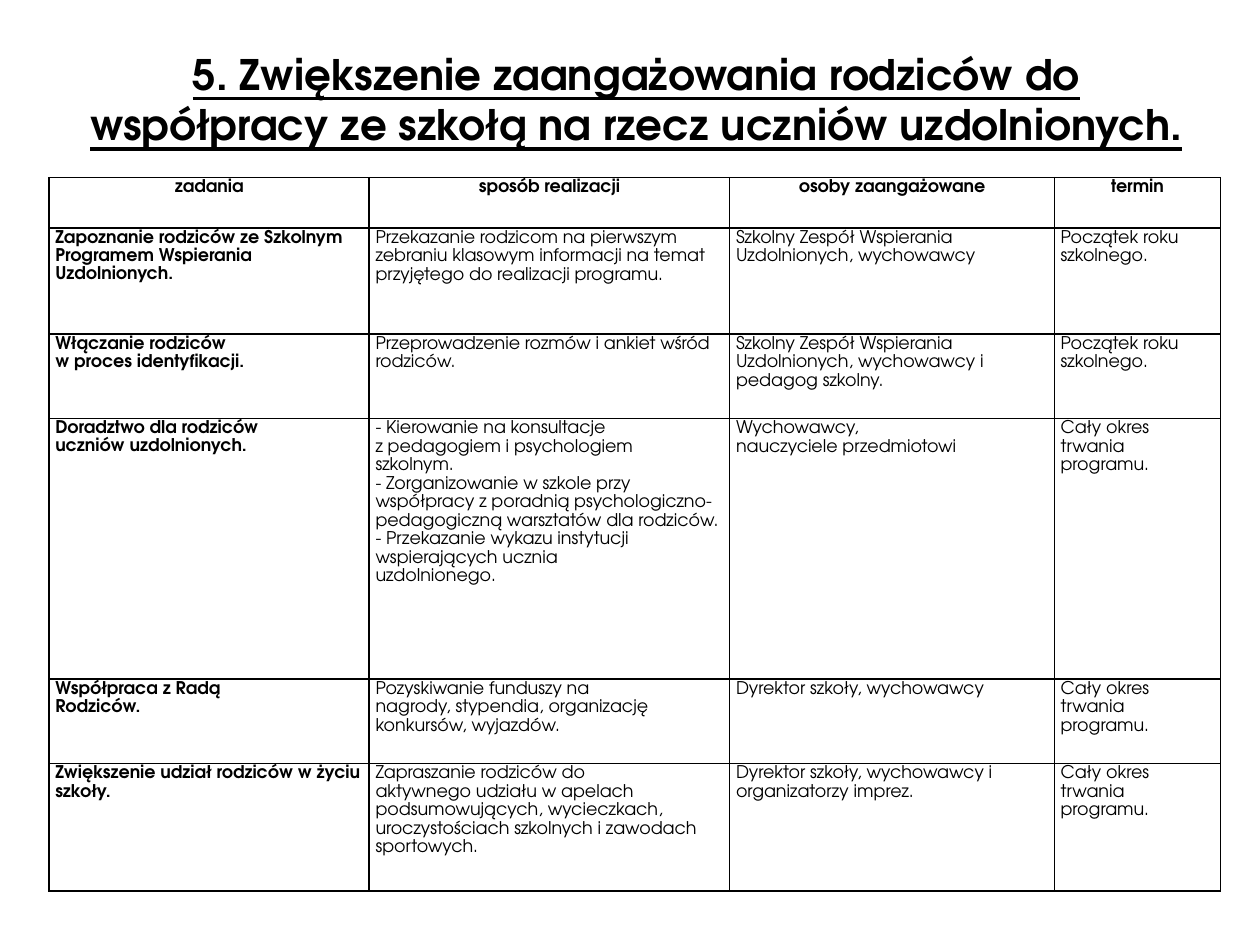
"""Build a slide with a table of tasks that involve parents in supporting gifted pupils."""
from dataclasses import dataclass

from lxml.etree import SubElement
from pptx import Presentation
from pptx.dml.color import RGBColor
from pptx.enum.text import MSO_ANCHOR, MSO_AUTO_SIZE, PP_ALIGN
from pptx.oxml.ns import qn
from pptx.util import Pt

FONT = "TeX Gyre Adventor"
BLACK = "000000"
WHITE = "FFFFFF"
TITLE = "5. Zwiększenie zaangażowania rodziców do współpracy ze szkołą na rzecz uczniów uzdolnionych."
HEADERS = ("zadania", "sposób realizacji", "osoby zaangażowane", "termin")
COLUMN_WIDTHS = (183, 206, 185.5, 95)
HEADER_HEIGHT = 28.8
START_OF_YEAR = "Początek roku szkolnego."
WHOLE_PROGRAMME = "Cały okres trwania programu."


@dataclass(frozen=True)
class Task:
    height: float
    name: str
    method: str
    people: str
    term: str


TASKS = (
    Task(
        60.5,
        "Zapoznanie rodziców ze Szkolnym Programem Wspierania Uzdolnionych.",
        "Przekazanie rodzicom na pierwszym zebraniu klasowym informacji na temat "
        "przyjętego do realizacji programu.",
        "Szkolny Zespół Wspierania Uzdolnionych, wychowawcy",
        START_OF_YEAR,
    ),
    Task(
        48.3,
        "Włączanie rodziców\nw proces identyfikacji.",
        "Przeprowadzenie rozmów i ankiet wśród rodziców.",
        "Szkolny Zespół Wspierania Uzdolnionych, wychowawcy i pedagog szkolny.",
        START_OF_YEAR,
    ),
    Task(
        149,
        "Doradztwo dla rodziców\nuczniów uzdolnionych.",
        "- Kierowanie na konsultacje\nz pedagogiem i psychologiem\nszkolnym.\n"
        "- Zorganizowanie w szkole przy współpracy z poradnią "
        "psychologiczno-pedagogiczną warsztatów dla rodziców.\n"
        "- Przekazanie wykazu instytucji\nwspierających ucznia\nuzdolnionego.",
        "Wychowawcy,\nnauczyciele przedmiotowi",
        WHOLE_PROGRAMME,
    ),
    Task(
        48.3,
        "Współpraca z Radą\nRodziców.",
        "Pozyskiwanie funduszy na\nnagrody, stypendia, organizację\nkonkursów, wyjazdów.",
        "Dyrektor szkoły, wychowawcy",
        WHOLE_PROGRAMME,
    ),
    Task(
        72.8,
        "Zwiększenie udział rodziców w życiu szkoły.",
        "Zapraszanie rodziców do\naktywnego udziału w apelach\n"
        "podsumowujących, wycieczkach, uroczystościach szkolnych i zawodach sportowych.",
        "Dyrektor szkoły, wychowawcy i organizatorzy imprez.",
        WHOLE_PROGRAMME,
    ),
)


def color(value: str) -> RGBColor:
    """Turn a hex string into a colour."""
    return RGBColor.from_string(value)


def write_text(text_frame, text: str, *, size: float, bold: bool = False, underline: bool = False,
               align=PP_ALIGN.LEFT, line_spacing: float = 1.0) -> None:
    """Fill a text frame, one paragraph per line, in one format."""
    text_frame.text = text
    for paragraph in text_frame.paragraphs:
        paragraph.alignment = align
        paragraph.line_spacing = line_spacing
        for run in paragraph.runs:
            run.font.name = FONT
            run.font.size = Pt(size)
            run.font.bold = bold
            run.font.underline = underline
            run.font.color.rgb = color(BLACK)


def add_borders(cell, width: float = 1) -> None:
    """Draw a black line on all four sides of a cell."""
    properties = cell._tc.get_or_add_tcPr()
    for position, side in enumerate(("a:lnL", "a:lnR", "a:lnT", "a:lnB")):
        line = SubElement(properties, qn(side), w=str(Pt(width)))
        properties.insert(position, line)
        fill = SubElement(line, qn("a:solidFill"))
        SubElement(fill, qn("a:srgbClr"), val=BLACK)


def format_cell(cell, text: str, *, bold: bool, align=PP_ALIGN.LEFT) -> None:
    """Set the text, fill, margins and borders of a cell."""
    cell.margin_left = cell.margin_right = Pt(3.6)
    cell.margin_top = cell.margin_bottom = Pt(0)
    cell.vertical_anchor = MSO_ANCHOR.TOP
    cell.fill.solid()
    cell.fill.fore_color.rgb = color(WHITE)
    add_borders(cell)
    write_text(cell.text_frame, text, size=10, bold=bold, align=align, line_spacing=1.15)


def add_title(slide) -> None:
    """Place and fill the title placeholder."""
    title = slide.shapes.title
    title.left, title.top, title.width, title.height = Pt(39.6), Pt(11.5), Pt(648), Pt(90)
    title.text_frame.auto_size = MSO_AUTO_SIZE.NONE
    title.text_frame.vertical_anchor = MSO_ANCHOR.MIDDLE
    write_text(title.text_frame, TITLE, size=24, bold=True, underline=True, align=PP_ALIGN.CENTER)


def add_task_table(slide) -> None:
    """Add the table with a header row and one row per task."""
    heights = (HEADER_HEIGHT, *(task.height for task in TASKS))
    table = slide.shapes.add_table(
        len(heights), len(HEADERS), Pt(28), Pt(101.5), Pt(sum(COLUMN_WIDTHS)), Pt(sum(heights))
    ).table
    for column, width in zip(table.columns, COLUMN_WIDTHS):
        column.width = Pt(width)
    for row, height in zip(table.rows, heights):
        row.height = Pt(height)
    for index, header in enumerate(HEADERS):
        format_cell(table.cell(0, index), header, bold=True, align=PP_ALIGN.CENTER)
    for row_index, task in enumerate(TASKS, start=1):
        for index, text in enumerate((task.name, task.method, task.people, task.term)):
            format_cell(table.cell(row_index, index), text, bold=index == 0)


def main() -> None:
    """Build and save the presentation."""
    presentation = Presentation()
    presentation.slide_width, presentation.slide_height = Pt(720), Pt(540)
    slide = presentation.slides.add_slide(presentation.slide_layouts[5])
    add_title(slide)
    add_task_table(slide)
    presentation.save("out.pptx")


if __name__ == "__main__":
    main()
